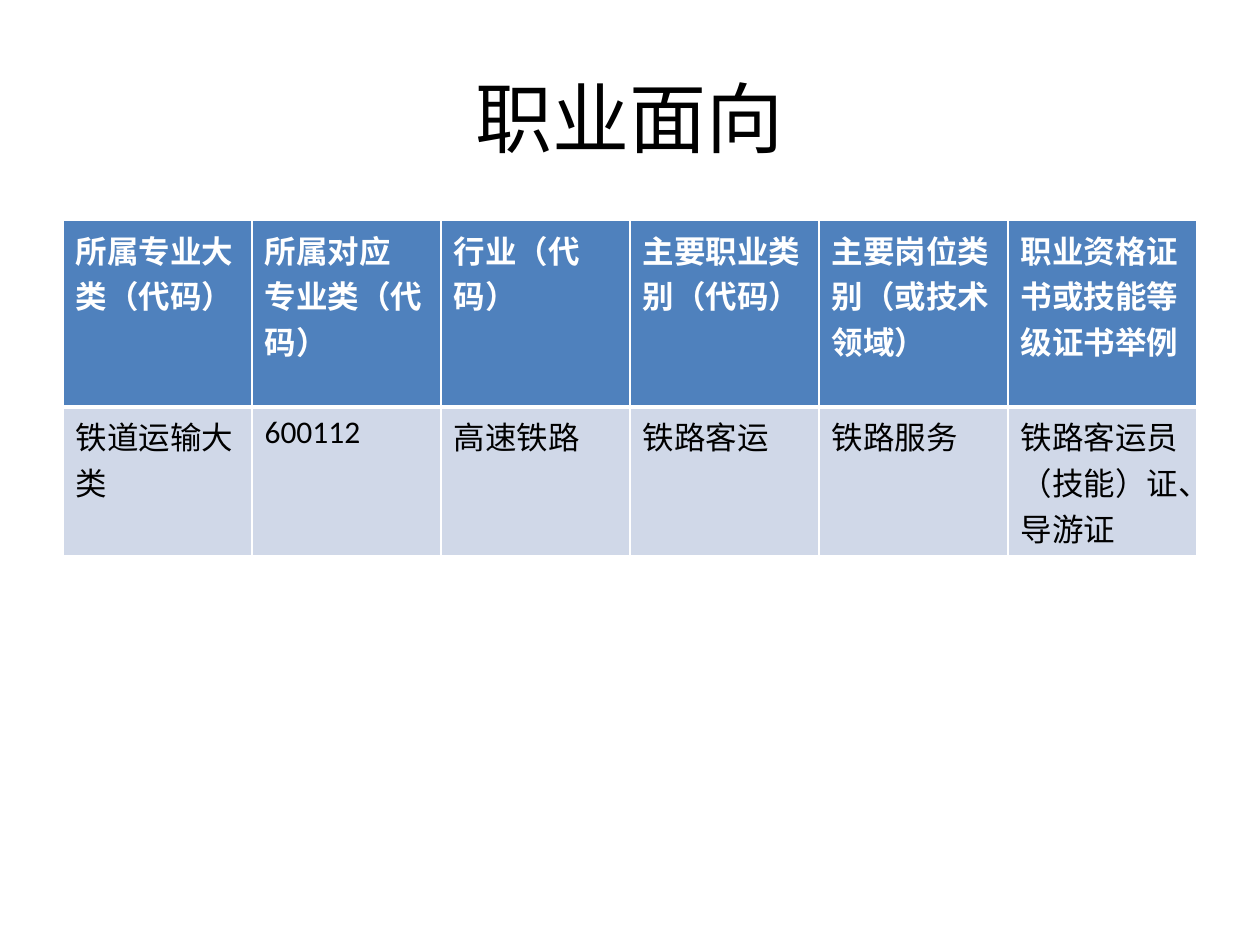
from lxml.etree import SubElement
from pptx import Presentation
from pptx.dml.color import RGBColor
from pptx.enum.text import MSO_ANCHOR, PP_ALIGN
from pptx.oxml.ns import qn
from pptx.util import Inches, Pt

COLORS = {"header": "4F81BD", "body": "D0D8E8", "white": "FFFFFF", "black": "000000"}
FONT = "Calibri"
HEADERS = [
    "所属专业大类（代码）",
    "所属对应\n专业类（代码）",
    "行业（代码）",
    "主要职业类别（代码）",
    "主要岗位类别（或技术领域）",
    "职业资格证书或技能等级证书举例",
]
VALUES = [
    "铁道运输大类",
    "600112",
    "高速铁路",
    "铁路客运",
    "铁路服务",
    "铁路客运员（技能）证、导游证",
]
ROW_HEIGHTS = [1.48, 1.18]
COLUMN_WIDTH = 1.5


def format_text(text_frame, size, color, bold=False):
    """Apply one font style to every run of a text frame."""
    for paragraph in text_frame.paragraphs:
        for run in paragraph.runs:
            run.font.name = FONT
            run.font.size = Pt(size)
            run.font.bold = bold
            run.font.color.rgb = RGBColor.from_string(COLORS[color])


def add_title(slide, text):
    """Add the centred slide title."""
    shape = slide.shapes.add_textbox(Inches(0.5), Inches(0.3), Inches(9), Inches(1.25))
    text_frame = shape.text_frame
    text_frame.word_wrap = True
    text_frame.vertical_anchor = MSO_ANCHOR.MIDDLE
    text_frame.text = text
    text_frame.paragraphs[0].alignment = PP_ALIGN.CENTER
    format_text(text_frame, 44, "black")


def set_borders(cell, top, bottom):
    """Draw white cell borders with the given top and bottom widths in points."""
    properties = cell._tc.get_or_add_tcPr()
    for side, width in (("L", 1), ("R", 1), ("T", top), ("B", bottom)):
        line = SubElement(properties, qn(f"a:ln{side}"), w=str(Pt(width)))
        fill = SubElement(line, qn("a:solidFill"))
        SubElement(fill, qn("a:srgbClr"), val=COLORS["white"])


def fill_row(table, row, texts, fill, color, bold, borders):
    """Write and style one table row."""
    for column, text in enumerate(texts):
        cell = table.cell(row, column)
        cell.text_frame.text = text
        format_text(cell.text_frame, 18, color, bold)
        set_borders(cell, *borders)
        cell.fill.solid()
        cell.fill.fore_color.rgb = RGBColor.from_string(COLORS[fill])


def add_career_table(slide):
    """Add the table of career fields."""
    columns = len(HEADERS)
    table = slide.shapes.add_table(
        len(ROW_HEIGHTS), columns, Inches(0.5), Inches(1.75),
        Inches(COLUMN_WIDTH * columns), Inches(sum(ROW_HEIGHTS)),
    ).table
    for column in table.columns:
        column.width = Inches(COLUMN_WIDTH)
    for row, height in zip(table.rows, ROW_HEIGHTS):
        row.height = Inches(height)
    fill_row(table, 0, HEADERS, "header", "white", True, (1, 3))
    fill_row(table, 1, VALUES, "body", "black", False, (3, 1))


def main():
    """Build and save the slide."""
    presentation = Presentation()
    presentation.slide_width = Inches(10)
    presentation.slide_height = Inches(7.5)
    slide = presentation.slides.add_slide(presentation.slide_layouts[6])
    add_title(slide, "职业面向")
    add_career_table(slide)
    presentation.save("out.pptx")


if __name__ == "__main__":
    main()
